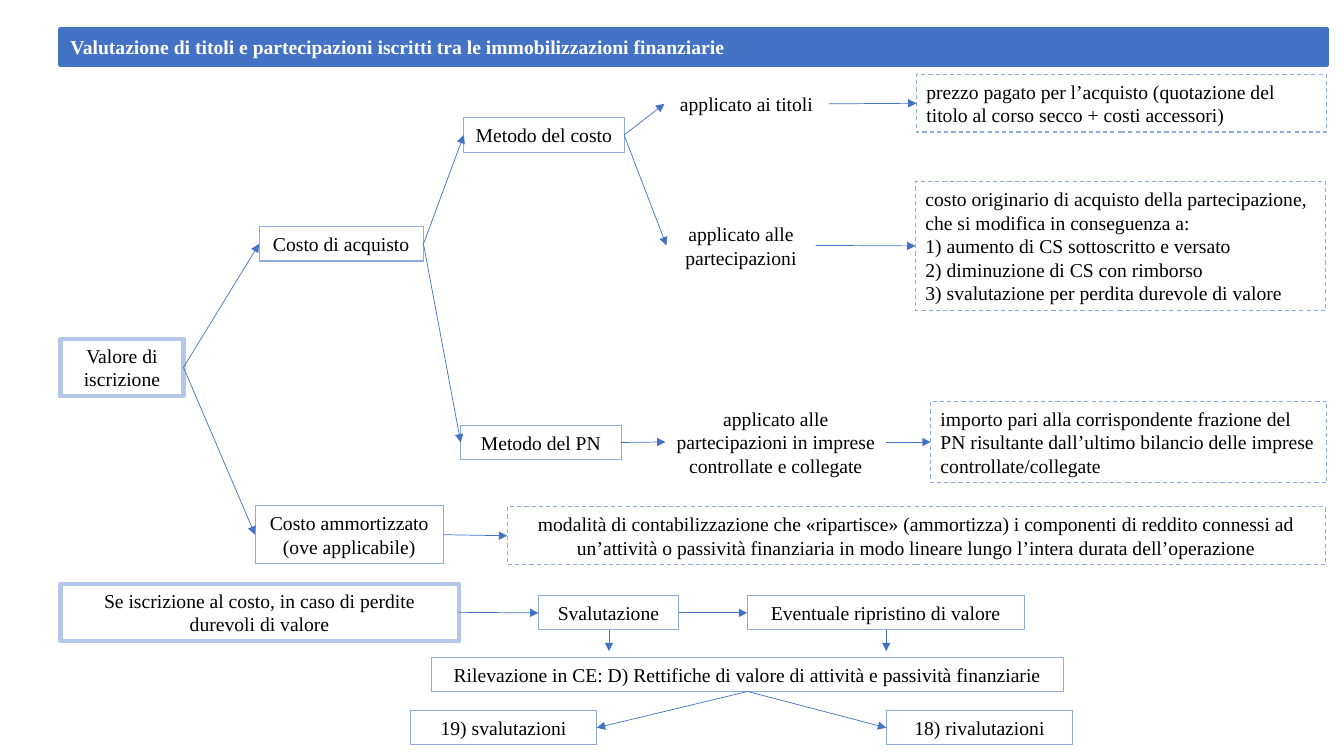
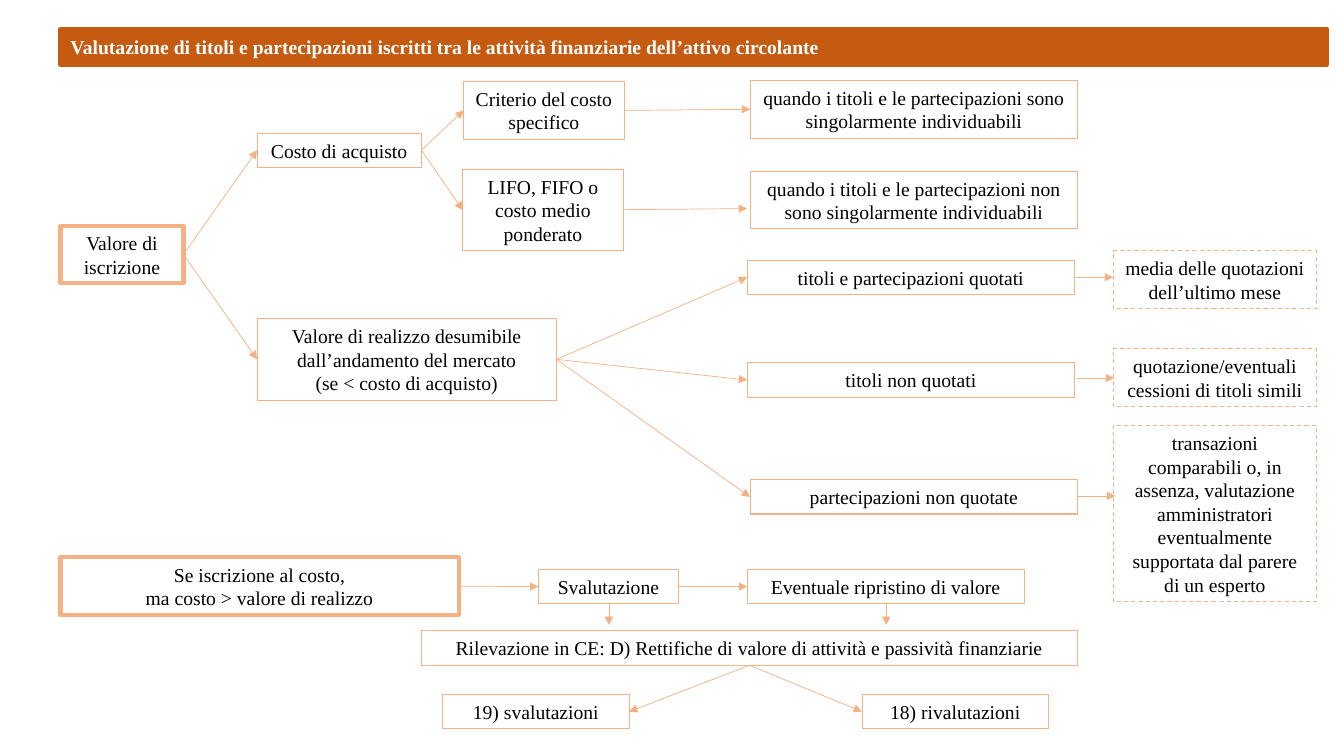
from dataclasses import dataclass

from lxml.etree import SubElement
from pptx import Presentation
from pptx.dml.color import RGBColor
from pptx.enum.dml import MSO_LINE
from pptx.enum.shapes import MSO_CONNECTOR, MSO_SHAPE
from pptx.enum.text import MSO_ANCHOR, MSO_AUTO_SIZE, PP_ALIGN
from pptx.oxml.ns import qn
from pptx.util import Pt

PX = 9144  # EMU per px, at 100 px to the inch
RECTANGLE, STRAIGHT = MSO_SHAPE.RECTANGLE, MSO_CONNECTOR.STRAIGHT
LEFT, CENTER = PP_ALIGN.LEFT, PP_ALIGN.CENTER
DASH = MSO_LINE.DASH
LEFT_SIDE, BOTTOM_SIDE, RIGHT_SIDE = 1, 2, 3  # connection sites of a rectangle


@dataclass(frozen=True)
class Palette:
    band: str
    frame: str
    border: str
    arrow: str


@dataclass(frozen=True)
class Theme:
    fixed_assets: Palette = Palette("4472C4", "B4C7E7", "8FAADC", "4472C4")
    current_assets: Palette = Palette("C55A11", "F4B183", "F4B183", "F4B183")
    text: str = "000000"
    title_text: str = "FFFFFF"
    font: str = "Times New Roman"
    size: int = 14
    thick: float = 3
    thin: float = 0.75
    hairline: float = 0.5


THEME = Theme()


def px(*lengths):
    return [length * PX for length in lengths]


def rgb(colour):
    return RGBColor.from_string(colour)


def box_height(lines):
    """Height in px of a box that fits this many lines of text."""
    return 34 + (lines - 1) * 47 // 2


def set_line(line, colour, width):
    line.color.rgb = rgb(colour)
    line.width = Pt(width)


def write(shape, text, align=CENTER, colour=THEME.text, bold=False):
    frame = shape.text_frame
    frame.text = text
    frame_format = {
        "word_wrap": True,
        "auto_size": MSO_AUTO_SIZE.SHAPE_TO_FIT_TEXT,
        "vertical_anchor": MSO_ANCHOR.MIDDLE,
    }
    for name, value in frame_format.items():
        setattr(frame, name, value)
    font_format = {"name": THEME.font, "size": Pt(THEME.size), "bold": bold}
    for paragraph in frame.paragraphs:
        paragraph.alignment = align
        for run in paragraph.runs:
            for name, value in font_format.items():
                setattr(run.font, name, value)
            run.font.color.rgb = rgb(colour)


class Diagram:
    """One slide with a title band, on which boxes and arrows are drawn."""

    def __init__(self, presentation, palette, title):
        blank = presentation.slide_layouts[6]
        self.shapes = presentation.slides.add_slide(blank).shapes
        self.palette = palette
        band = self.rectangle(60, 29, 1256, 35, palette.band, THEME.thick)
        band.fill.solid()
        band.fill.fore_color.rgb = rgb(palette.band)
        write(band, title, LEFT, THEME.title_text, True)

    def rectangle(self, left, top, width, height, colour, line_width):
        shape = self.shapes.add_shape(RECTANGLE, *px(left, top, width, height))
        shape.shadow.inherit = False
        shape.fill.background()
        set_line(shape.line, colour, line_width)
        return shape

    def root(self, text, left, top, width):
        shape = self.rectangle(left, top, width, box_height(2),
                               self.palette.frame, THEME.thick)
        write(shape, text)
        return shape

    def box(self, text, left, top, width, lines=1):
        shape = self.rectangle(left, top, width, box_height(lines),
                               self.palette.border, THEME.thin)
        write(shape, text)
        return shape

    def note(self, text, left, top, width, lines, align=CENTER):
        """Dashed box with an explanation."""
        shape = self.box(text, left, top, width, lines)
        shape.line.dash_style = DASH
        write(shape, text, align)
        return shape

    def label(self, text, left, top, width, lines=1):
        shape = self.shapes.add_textbox(*px(left, top, width, box_height(lines)))
        write(shape, text)
        return shape

    def arrow(self, start=(0, 0), end=(0, 0)):
        connector = self.shapes.add_connector(STRAIGHT, *px(*start, *end))
        set_line(connector.line, self.palette.arrow, THEME.hairline)
        properties = connector._element.spPr
        SubElement(properties.find(qn("a:ln")), qn("a:tailEnd"), type="triangle")
        SubElement(properties, qn("a:effectLst"))
        return connector

    def link(self, source, *targets, leave=RIGHT_SIDE, enter=LEFT_SIDE):
        """Glue an arrow from one shape to each of the targets."""
        for target in targets:
            connector = self.arrow()
            connector.begin_connect(source, leave)
            connector.end_connect(target, enter)

    def write_down_chain(self, cause_text, top, ledger_span, outcome_top, outcome_lefts):
        """Row from the cause to the restored value, with its ledger entries."""
        cause = self.root(cause_text, 60, top, 395)
        write_down = self.box("Svalutazione", 534, top + 12, 139)
        recovery = self.box("Eventuale ripristino di valore", 741, top + 12, 275)
        self.link(cause, write_down)
        self.link(write_down, recovery)
        for center in (604, 879):
            self.arrow((center, top + 46), (center, top + 67))

        ledger_left, ledger_width = ledger_span
        ledger = self.box(
            "Rilevazione in CE: D) Rettifiche di valore di attività e passività finanziarie",
            ledger_left, top + 73, ledger_width)
        losses, gains = (
            self.box(text, left, outcome_top, 185)
            for text, left in zip(("19) svalutazioni", "18) rivalutazioni"), outcome_lefts))
        self.link(ledger, losses, leave=BOTTOM_SIDE, enter=RIGHT_SIDE)
        self.link(ledger, gains, leave=BOTTOM_SIDE)


def fixed_assets_slide(presentation):
    diagram = Diagram(
        presentation, THEME.fixed_assets,
        "Valutazione di titoli e partecipazioni iscritti tra le immobilizzazioni finanziarie")
    value = diagram.root("Valore di iscrizione", 60, 336, 122)
    purchase = diagram.box("Costo di acquisto", 257, 225, 163)
    amortised = diagram.box("Costo ammortizzato (ove applicabile)", 253, 502, 187, 2)
    cost_method = diagram.box("Metodo del costo", 460, 117, 159)
    equity_method = diagram.box("Metodo del PN", 457, 422, 159)
    diagram.link(value, purchase, amortised)
    diagram.link(purchase, cost_method, equity_method)

    securities = diagram.label("applicato ai titoli", 659, 86, 163)
    holdings = diagram.label("applicato alle partecipazioni", 661, 215, 148, 2)
    subsidiaries = diagram.label(
        "applicato alle partecipazioni in imprese controllate e collegate", 660, 398, 219, 3)
    diagram.link(cost_method, securities, holdings)
    diagram.link(equity_method, subsidiaries)

    explanations = (
        (securities, 909, 74, 407, 2, LEFT,
         "prezzo pagato per l’acquisto (quotazione del titolo al corso secco + costi accessori)"),
        (holdings, 908, 180, 407, 5, LEFT,
         "costo originario di acquisto della partecipazione, che si modifica in conseguenza a:\n"
         "1) aumento di CS sottoscritto e versato\n"
         "2) diminuzione di CS con rimborso\n"
         "3) svalutazione per perdita durevole di valore"),
        (subsidiaries, 923, 398, 393, 3, LEFT,
         "importo pari alla corrispondente frazione del PN risultante dall’ultimo bilancio "
         "delle imprese controllate/collegate"),
        (amortised, 503, 503, 812, 2, CENTER,
         "modalità di contabilizzazione che «ripartisce» (ammortizza) i componenti di reddito "
         "connessi ad un’attività o passività finanziaria in modo lineare lungo l’intera "
         "durata dell’operazione"),
    )
    for source, left, top, width, lines, align, text in explanations:
        diagram.link(source, diagram.note(text, left, top, width, lines, align))

    diagram.write_down_chain("Se iscrizione al costo, in caso di perdite durevoli di valore",
                             579, (428, 627), 705, (407, 879))


def current_assets_slide(presentation):
    diagram = Diagram(
        presentation, THEME.current_assets,
        "Valutazione di titoli e partecipazioni iscritti tra le attività finanziarie "
        "dell’attivo circolante")
    value = diagram.root("Valore di iscrizione", 60, 224, 122)
    purchase = diagram.box("Costo di acquisto", 255, 132, 163)
    realisable = diagram.box(
        "Valore di realizzo desumibile dall’andamento del mercato\n(se < costo di acquisto)",
        255, 316, 297, 3)
    specific_cost = diagram.box("Criterio del costo specifico", 460, 81, 159, 2)
    flow_cost = diagram.box("LIFO, FIFO o costo medio ponderato", 459, 168, 159, 3)
    diagram.link(value, purchase, realisable)
    diagram.link(purchase, specific_cost, flow_cost)

    identifiable = diagram.box(
        "quando i titoli e le partecipazioni sono singolarmente individuabili", 744, 80, 325, 2)
    diagram.box("quando i titoli e le partecipazioni non sono singolarmente individuabili",
                744, 170, 325, 2)
    diagram.link(specific_cost, identifiable)
    diagram.arrow((618, 208), (741, 207))

    market_cases = (
        ("titoli e partecipazioni quotati", 741, 258),
        ("titoli non quotati", 741, 360),
        ("partecipazioni non quotate", 744, 476),
    )
    for text, left, top in market_cases:
        diagram.link(realisable, diagram.box(text, left, top, 325))

    market_sources = (
        ("media delle quotazioni dell’ultimo mese", 249, 2, 1067, 275),
        ("quotazione/eventuali cessioni di titoli simili", 346, 2, 1068, 375),
        ("transazioni comparabili o, in assenza, valutazione amministratori eventualmente "
         "supportata dal parere di un esperto", 422, 7, 1069, 492),
    )
    for text, top, lines, arrow_left, arrow_top in market_sources:
        diagram.note(text, 1104, top, 202, lines)
        diagram.arrow((arrow_left, arrow_top), (arrow_left + 37, arrow_top))

    diagram.write_down_chain("Se iscrizione al costo,\nma costo > valore di realizzo",
                             553, (418, 651), 689, (439, 855))


def main():
    presentation = Presentation()
    presentation.slide_width, presentation.slide_height = px(1333, 750)
    fixed_assets_slide(presentation)
    current_assets_slide(presentation)
    presentation.save("out.pptx")


if __name__ == "__main__":
    main()
